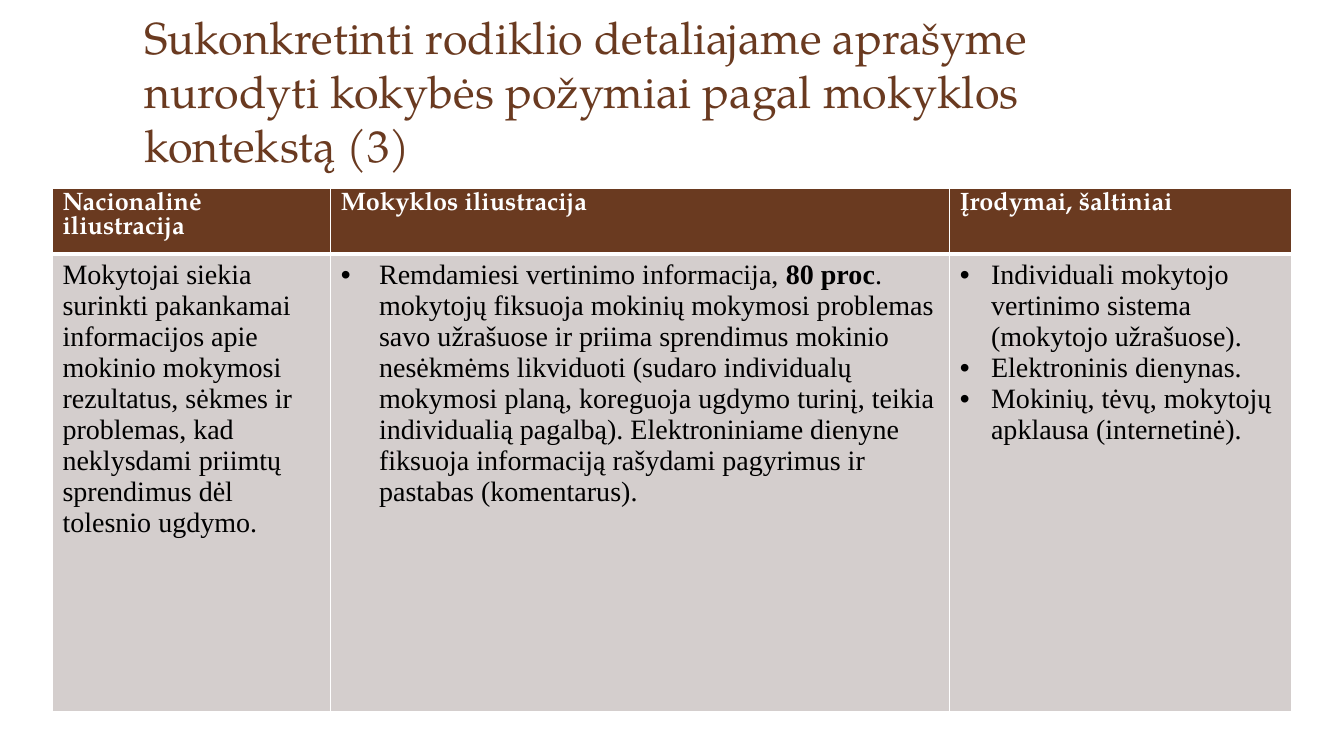
from lxml import etree
from pptx import Presentation
from pptx import util as u
from pptx.dml import color
from pptx.enum import text
from pptx.oxml import ns

COLORS = {"brown": "6A3A20", "grey": "D4CECD", "white": "FFFFFF", "black": "000000"}
HEADING_FONT = "TeX Gyre Pagella"
BODY_FONT = "Times New Roman"

TITLE = "Sukonkretinti rodiklio detaliajame aprašyme nurodyti kokybės požymiai pagal mokyklos kontekstą (3)"
HEADERS = ["Nacionalinė iliustracija", "Mokyklos iliustracija", "Įrodymai, šaltiniai"]
NATIONAL = [["Mokytojai siekia surinkti pakankamai informacijos apie mokinio mokymosi rezultatus, sėkmes ir problemas, kad neklysdami priimtų sprendimus dėl tolesnio ugdymo."]]
SCHOOL = [[
    "Remdamiesi vertinimo informacija, ",
    "80 proc",
    ". mokytojų fiksuoja mokinių mokymosi problemas savo užrašuose ir priima sprendimus mokinio nesėkmėms likviduoti (sudaro individualų mokymosi planą, koreguoja ugdymo turinį, teikia individualią pagalbą). Elektroniniame dienyne fiksuoja informaciją rašydami pagyrimus ir pastabas (komentarus).",
]]
EVIDENCE = [
    ["Individuali mokytojo vertinimo sistema (mokytojo užrašuose)."],
    ["Elektroninis dienynas."],
    ["Mokinių, tėvų, mokytojų apklausa (internetinė)."],
]
BODY = [(NATIONAL, 0), (SCHOOL, 0.38), (EVIDENCE, 0.31)]
COLUMN_WIDTHS = [2.76, 6.14, 3.39]
ROW_HEIGHTS = [0.65, 4.54]


class SlideBuilder:
    def __init__(self, presentation):
        self.width = presentation.slide_width
        self.height = presentation.slide_height
        self.slide = presentation.slides.add_slide(presentation.slide_layouts[5])

    def box(self, left, top, width, height):
        return (int(left * self.width), int(top * self.height),
                int(width * self.width), int(height * self.height))

    def style(self, paragraph, font, size, hue, spacing, bold=False):
        paragraph.line_spacing = u.Pt(spacing)
        for run in paragraph.runs:
            run.font.name = font
            run.font.size = u.Pt(size)
            run.font.bold = bold
            run.font.color.rgb = color.RGBColor.from_string(COLORS[hue])

    def title(self, wording, left, top, width, height):
        shape = self.slide.shapes.title
        shape.left, shape.top, shape.width, shape.height = self.box(left, top, width, height)
        frame = shape.text_frame
        frame.text = wording
        frame.word_wrap = True
        frame.auto_size = text.MSO_AUTO_SIZE.NONE
        frame.vertical_anchor = text.MSO_ANCHOR.BOTTOM
        paragraph = frame.paragraphs[0]
        paragraph.alignment = text.PP_ALIGN.LEFT
        self.style(paragraph, HEADING_FONT, 32, "brown", 38.5)

    def bullet(self, paragraph, indent):
        properties = paragraph._p.get_or_add_pPr()
        properties.set("marL", str(u.Inches(indent)))
        properties.set("indent", str(-u.Inches(indent)))
        font = etree.SubElement(properties, ns.qn("a:buFont"))
        font.set("typeface", "Arial")
        etree.SubElement(properties, ns.qn("a:buChar")).set("char", "•")

    def paint(self, cell, hue, borders):
        properties = cell._tc.get_or_add_tcPr()
        for side, points in zip("LRTB", borders):
            line = etree.SubElement(properties, ns.qn(f"a:ln{side}"))
            line.set("w", str(u.Pt(points)))
            fill = etree.SubElement(line, ns.qn("a:solidFill"))
            etree.SubElement(fill, ns.qn("a:srgbClr")).set("val", COLORS["white"])
        cell.fill.solid()
        cell.fill.fore_color.rgb = color.RGBColor.from_string(COLORS[hue])

    def header_cell(self, cell, wording):
        cell.text_frame.text = wording
        self.style(cell.text_frame.paragraphs[0], HEADING_FONT, 18, "white", 17, True)
        self.paint(cell, "brown", (1, 1, 1, 3))

    def body_cell(self, cell, paragraphs, indent):
        frame = cell.text_frame
        frame.text = "\n".join(parts[0] for parts in paragraphs)
        for paragraph, parts in zip(frame.paragraphs, paragraphs):
            if indent:
                self.bullet(paragraph, indent)
            for part in parts[1:]:
                paragraph.add_run().text = part
            self.style(paragraph, BODY_FONT, 20, "black", 22.2)
            for run in paragraph.runs[1:2]:
                run.font.bold = True
        self.paint(cell, "grey", (1, 1, 3, 1))

    def table(self, left, top, width, height):
        frame = self.slide.shapes.add_table(
            len(ROW_HEIGHTS), len(COLUMN_WIDTHS), *self.box(left, top, width, height))
        table = frame.table
        for column, share in zip(table.columns, COLUMN_WIDTHS):
            column.width = int(width * self.width * share / sum(COLUMN_WIDTHS))
        for row, share in zip(table.rows, ROW_HEIGHTS):
            row.height = int(height * self.height * share / sum(ROW_HEIGHTS))
        for index, (heading, content) in enumerate(zip(HEADERS, BODY)):
            self.header_cell(table.cell(0, index), heading)
            self.body_cell(table.cell(1, index), *content)


def main():
    presentation = Presentation()
    presentation.slide_width = u.Inches(13.33)
    presentation.slide_height = u.Inches(7.5)
    builder = SlideBuilder(presentation)
    builder.title(TITLE, 1.33 / 13.33, 0.47 / 7.5, 10.66 / 13.33, 1.28 / 7.5)
    builder.table(0.52 / 13.33, 1.87 / 7.5, 12.29 / 13.33, 5.19 / 7.5)
    presentation.save("out.pptx")


if __name__ == "__main__":
    main()
